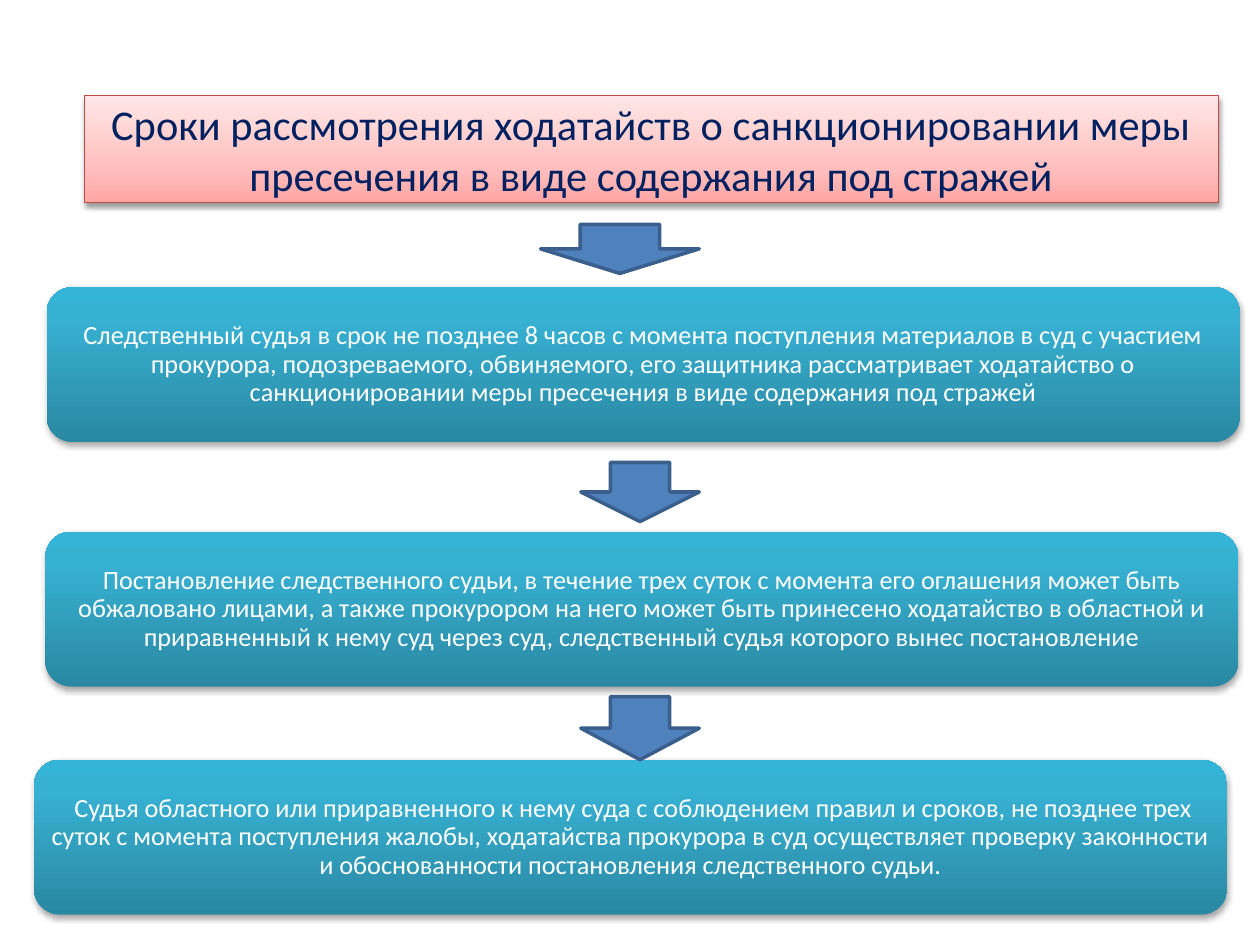
from lxml.etree import SubElement
from pptx import Presentation
from pptx.dml.color import RGBColor
from pptx.enum.shapes import MSO_SHAPE as Shapes
from pptx.enum.text import MSO_ANCHOR as Anchor, MSO_AUTO_SIZE as AutoSize, PP_ALIGN as Align
from pptx.oxml.ns import qn
from pptx.util import Inches, Pt

COLORS = {
    "title_text": "002060", "title_line": "BF4C48",
    "step_text": "FFFFFF", "arrow": "4F81BD", "arrow_line": "3A5F8C",
    "shadow": "000000",
}
TITLE_STOPS = [(0, "FFA6A5"), (35, "FFC0BF"), (100, "FFE7E7")]
STEP_STOPS = [(0, "2A88A2"), (80, "37B1D2"), (100, "34B4D6")]

TITLE = "Сроки рассмотрения ходатайств о санкционировании меры пресечения в виде содержания под стражей"
STEPS = [
    (0.37, 2.28, "Следственный судья в срок не позднее 8 часов с момента поступления материалов в суд с участием прокурора, подозреваемого, обвиняемого, его защитника рассматривает ходатайство о санкционировании меры пресечения в виде содержания под стражей"),
    (0.36, 4.22, "Постановление следственного судьи, в течение трех суток с момента его оглашения может быть обжаловано лицами, а также прокурором на него может быть принесено ходатайство в областной и приравненный к нему суд через суд, следственный судья которого вынес постановление"),
    (0.27, 6.03, " Судья областного или приравненного к нему суда с соблюдением правил и сроков, не позднее трех суток с момента поступления жалобы, ходатайства прокурора в суд осуществляет проверку законности и обоснованности постановления следственного судьи."),
]
ARROWS = [(4.29, 1.78, 1.26, 0.39), (4.61, 3.67, 0.94, 0.47), (4.61, 5.53, 0.94, 0.5)]


class SlideBuilder:
    font_name = "Calibri"

    def __init__(self, slide):
        self.slide = slide

    def apply(self, target, values):
        for name, value in values.items():
            setattr(target, name, value)

    def color(self, name):
        return RGBColor.from_string(COLORS[name])

    def gradient(self, shape, stops):
        shape.fill.gradient()
        gradient = shape.fill._fill._gradFill
        stop_list = gradient.find(qn("a:gsLst"))
        stop_list.clear()
        for position, color in stops:
            stop = SubElement(stop_list, qn("a:gs"), pos=str(position * 1000))
            SubElement(stop, qn("a:srgbClr"), val=color)
        gradient.find(qn("a:lin")).set("ang", "16200000")

    def outline(self, shape, color, width):
        shape.line.color.rgb = self.color(color)
        shape.line.width = Pt(width)

    def shadow(self, shape, opacity, distance):
        shape.shadow.inherit = False
        effects = shape._element.spPr.find(qn("a:effectLst"))
        shadow = SubElement(effects, qn("a:outerShdw"), blurRad=str(Pt(3.1)),
                            dist=str(Pt(distance)), dir="5400000", rotWithShape="0")
        color = SubElement(shadow, qn("a:srgbClr"), val=COLORS["shadow"])
        SubElement(color, qn("a:alpha"), val=str(opacity * 1000))

    def text(self, shape, text, size, color, margin_x, margin_y, spacing):
        frame = shape.text_frame
        self.apply(frame, {
            "text": text, "word_wrap": True, "auto_size": AutoSize.NONE,
            "vertical_anchor": Anchor.MIDDLE,
            "margin_left": Inches(margin_x), "margin_right": Inches(margin_x),
            "margin_top": Inches(margin_y), "margin_bottom": Inches(margin_y),
        })
        paragraph = frame.paragraphs[0]
        self.apply(paragraph, {"alignment": Align.CENTER, "line_spacing": spacing})
        font = paragraph.runs[0].font
        self.apply(font, {"name": self.font_name, "size": Pt(size)})
        font.color.rgb = self.color(color)

    def title(self, text, left, top, width, height):
        shape = self.slide.shapes.title
        self.apply(shape, {"left": Inches(left), "top": Inches(top),
                           "width": Inches(width), "height": Inches(height)})
        self.gradient(shape, TITLE_STOPS)
        self.outline(shape, "title_line", 0.75)
        self.shadow(shape, 38, 1.6)
        self.text(shape, text, 24.2, "title_text", 0.1, 0.05, 1.0)

    def preset(self, kind, *box):
        return self.slide.shapes.add_shape(kind, *map(Inches, box))

    def step(self, left, top, text):
        shape = self.preset(Shapes.ROUNDED_RECTANGLE, left, top, 9.47, 1.23)
        self.gradient(shape, STEP_STOPS)
        shape.line.fill.background()
        self.shadow(shape, 35, 1.8)
        self.text(shape, text, 15, "step_text", 0.06, 0.06, 0.9)

    def arrow(self, *box):
        shape = self.preset(Shapes.DOWN_ARROW, *box)
        shape.fill.solid()
        shape.fill.fore_color.rgb = self.color("arrow")
        self.outline(shape, "arrow_line", 2)
        shape.shadow.inherit = False


def main():
    presentation = Presentation()
    presentation.slide_width = Inches(10)
    presentation.slide_height = Inches(7.5)
    builder = SlideBuilder(presentation.slides.add_slide(presentation.slide_layouts[5]))
    builder.title(TITLE, 0.67, 0.76, 9, 0.85)
    for step in STEPS:
        builder.step(*step)
    for arrow in ARROWS:
        builder.arrow(*arrow)
    presentation.save("out.pptx")


if __name__ == "__main__":
    main()
